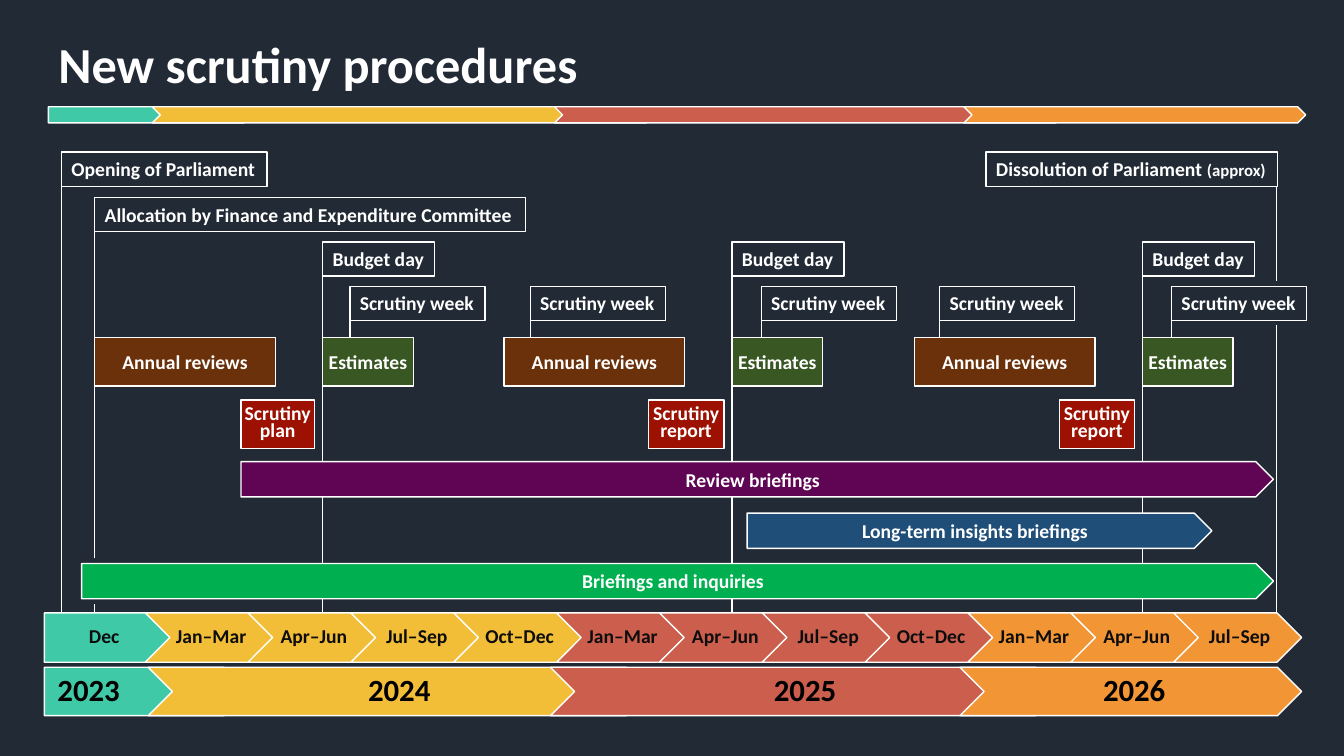
from dataclasses import dataclass, field

import pptx
import pptx.dml.color
import pptx.enum.shapes
import pptx.enum.text
import pptx.oxml.ns
import pptx.slide
import pptx.util
from lxml import etree

EMU_PER_PX = 9144
SHAPE = pptx.enum.shapes.MSO_SHAPE
ALIGN = pptx.enum.text.PP_ALIGN
ANCHOR = pptx.enum.text.MSO_ANCHOR
FIT = pptx.enum.text.MSO_AUTO_SIZE


def px(length):
    return pptx.util.Emu(length * EMU_PER_PX)


def rgb(value):
    return pptx.dml.color.RGBColor.from_string(value)


def apply(target, formats):
    for name, value in formats.items():
        setattr(target, name, value)


@dataclass
class Theme:
    font: str = "Calibri"
    background: str = "222A35"
    light: str = "FFFFFF"
    month_ink: str = "0D0D0D"
    year_ink: str = "000000"
    review: str = "6A310A"
    estimates: str = "385723"
    scrutiny: str = "9C1102"
    review_briefings: str = "5F0554"
    insights: str = "1F4E79"
    inquiries: str = "00B050"
    years: tuple = ("40C9A6", "F2BD37", "CC5E4D", "F29635")
    title_size: int = 36
    year_size: int = 22
    label_size: int = 14
    note_size: int = 12


@dataclass
class Timeline:
    slide: pptx.slide.Slide
    theme: Theme = field(default_factory=Theme)

    def wording(self, paragraph, text, size, ink):
        run = paragraph.add_run()
        run.text = text
        apply(run.font, {"name": self.theme.font, "size": pptx.util.Pt(size), "bold": True})
        run.font.color.rgb = rgb(ink)

    def title(self, text, left, top, width, height):
        heading = self.slide.shapes.title
        apply(heading, {"left": px(left), "top": px(top), "width": px(width), "height": px(height)})
        apply(heading.text_frame, {"vertical_anchor": ANCHOR.TOP, "auto_size": FIT.NONE, "word_wrap": True})
        paragraph = heading.text_frame.paragraphs[0]
        paragraph.alignment = ALIGN.LEFT
        self.wording(paragraph, text, self.theme.title_size, self.theme.light)

    def block(self, kind, left, top, width, height, fill, text="", size=None, ink=None,
              frame=None, paragraph=None):
        box = self.slide.shapes.add_shape(kind, px(left), px(top), px(width), px(height))
        box.shadow.inherit = False
        box.fill.solid()
        box.fill.fore_color.rgb = rgb(fill)
        box.line.color.rgb = rgb(self.theme.light)
        box.line.width = pptx.util.Pt(1)
        apply(box.text_frame, {"vertical_anchor": ANCHOR.MIDDLE, "word_wrap": True, **(frame or {})})
        label = box.text_frame.paragraphs[0]
        apply(label, {"alignment": ALIGN.CENTER, **(paragraph or {})})
        if text:
            self.wording(label, text, size or self.theme.label_size, ink or self.theme.light)
        return label

    def flag(self, left, top, width, text, note=""):
        frame = {"vertical_anchor": ANCHOR.TOP, "word_wrap": bool(note), "auto_size": FIT.SHAPE_TO_FIT_TEXT}
        label = self.block(SHAPE.RECTANGLE, left, top, width, 34, self.theme.background, text,
                           frame=frame, paragraph={"alignment": ALIGN.LEFT})
        if note:
            self.wording(label, note, self.theme.note_size, self.theme.light)

    def pole(self, x, top, bottom):
        line = self.slide.shapes.add_connector(
            pptx.enum.shapes.MSO_CONNECTOR.STRAIGHT, px(x), px(top), px(x), px(bottom))
        line.line.color.rgb = rgb(self.theme.light)
        line.line.width = pptx.util.Pt(1)
        etree.SubElement(line.element.spPr, pptx.oxml.ns.qn("a:effectLst"))

    def activity(self, left, width, top, fill, text, tight=True, paragraph=None):
        frame = {"margin_left": 0, "margin_right": 0} if tight else {}
        self.block(SHAPE.FLOWCHART_PROCESS, left, top, width, 48, fill, text,
                   frame=frame, paragraph=paragraph)

    def arrow(self, left, top, width, fill, text):
        self.block(SHAPE.PENTAGON, left, top, width, 35, fill, text)

    def year_band(self, left, top, height, labels):
        segments = zip((0, 103, 502, 908), (202, 498, 505, 339), self.theme.years, labels)
        for index, (offset, width, fill, label) in enumerate(segments):
            self.block(SHAPE.CHEVRON if index else SHAPE.PENTAGON, left + offset, top, width, height,
                       fill, label, self.theme.year_size, self.theme.year_ink,
                       {"margin_left": px(10 if index else 13), "margin_right": px(3)},
                       {"alignment": ALIGN.CENTER if index else ALIGN.LEFT, "line_spacing": 0.9})

    def quarter_band(self, left, top):
        quarters = ("Jan–Mar", "Apr–Jun", "Jul–Sep", "Oct–Dec")
        frame = {"margin_left": px(6), "margin_right": px(2), "word_wrap": False}
        for index in range(12):
            year, quarter = divmod(index + 3, 4)
            self.block(SHAPE.CHEVRON if index else SHAPE.PENTAGON,
                       left - 2 + 102 * index if index else left, top, 127, 49,
                       self.theme.years[year], quarters[quarter] if index else "Dec",
                       ink=self.theme.month_ink, frame=frame, paragraph={"line_spacing": 0.9})


def main():
    deck = pptx.Presentation()
    apply(deck, {"slide_width": px(1333), "slide_height": px(750)})
    slide = deck.slides.add_slide(deck.slide_layouts[5])
    timeline = Timeline(slide)
    theme = timeline.theme
    slide.background.fill.solid()
    slide.background.fill.fore_color.rgb = rgb(theme.background)

    timeline.title("New scrutiny procedures", 48, 28, 1194, 71)
    timeline.year_band(48, 106, 16, ("", "", "", ""))

    cycles = (0, 406, 813)
    budget_days = [320 + cycle for cycle in cycles]
    estimates_weeks = [347 + cycle for cycle in (0, 408, 815)]
    review_weeks = [526 + cycle for cycle in cycles[:2]]
    scrutiny_weeks = estimates_weeks + review_weeks

    poles = [(61, 168, 625), (94, 224, 554), (94, 599, 626), (1266, 152, 279), (1266, 322, 618)]
    poles += [(day, 271, 640) for day in budget_days]
    poles += [(week, 290, 369) for week in scrutiny_weeks]
    for x, top, bottom in poles:
        timeline.pole(x, top, bottom)

    timeline.flag(61, 151, 204, "Opening of Parliament")
    timeline.flag(978, 151, 289, "Dissolution of Parliament ", "(approx)")
    timeline.flag(94, 196, 427, "Allocation by Finance and Expenditure Committee")
    for day in budget_days:
        timeline.flag(day, 240, 111, "Budget day")
    for week in scrutiny_weeks:
        timeline.flag(week, 284, 134, "Scrutiny week")

    papers = (("Scrutiny plan", 73), ("Scrutiny report", 75), ("Scrutiny report", 74))
    for cycle, day, (paper, width) in zip(cycles, budget_days, papers):
        timeline.activity(94 + cycle, 179, 335, theme.review, "Annual reviews", tight=False)
        timeline.activity(day, 90, 335, theme.estimates, "Estimates")
        timeline.activity(day - 8 - width, width, 397, theme.scrutiny, paper,
                          paragraph={"line_spacing": pptx.util.Pt(12)})

    timeline.arrow(239, 458, 1024, theme.review_briefings, "Review briefings")
    timeline.arrow(741, 509, 461, theme.insights, "Long-term insights briefings")
    timeline.arrow(81, 559, 1182, theme.inquiries, "Briefings and inquiries")

    timeline.quarter_band(44, 608)
    timeline.year_band(44, 662, 48, ("2023", "2024 ", "2025 ", "2026"))
    deck.save("out.pptx")


if __name__ == "__main__":
    main()
